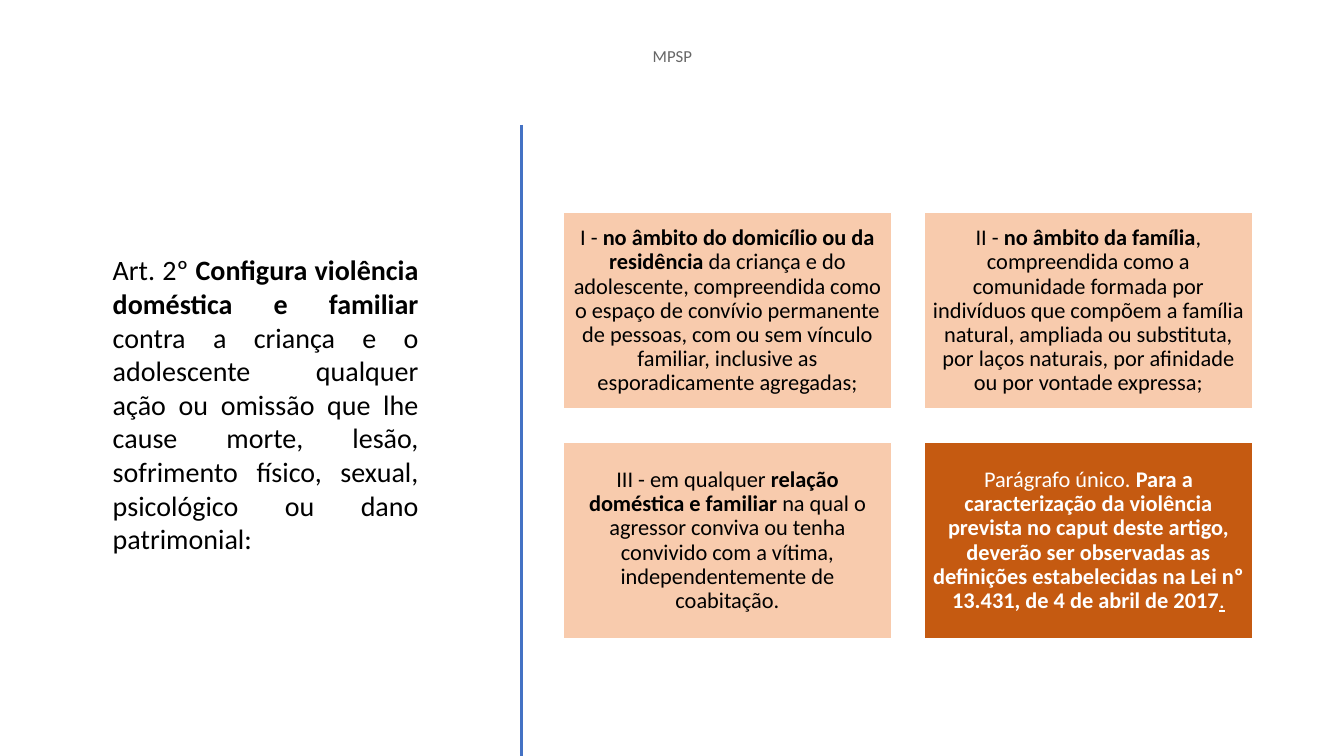
from dataclasses import dataclass

from lxml.etree import SubElement
from pptx import Presentation
from pptx.dml.color import RGBColor as RGB
from pptx.enum.shapes import MSO_CONNECTOR as Connector, MSO_SHAPE as Shape
from pptx.enum.text import MSO_ANCHOR as Anchor, PP_ALIGN as Align
from pptx.oxml.ns import qn
from pptx.slide import Slide
from pptx.text.text import TextFrame
from pptx.util import Inches, Pt


@dataclass(frozen=True)
class Theme:
    font: str = "Calibri"
    ink: RGB = RGB(0x00, 0x00, 0x00)
    muted: RGB = RGB(0x66, 0x66, 0x66)
    white: RGB = RGB(0xFF, 0xFF, 0xFF)
    peach: RGB = RGB(0xF8, 0xCB, 0xAD)
    rust: RGB = RGB(0xC5, 0x5A, 0x11)
    blue: RGB = RGB(0x44, 0x72, 0xC4)
    header: int = 12
    article: int = 20
    card: int = 16


@dataclass(frozen=True)
class Span:
    text: str
    bold: bool = False
    underline: bool = False


@dataclass(frozen=True)
class Grid:
    left: float
    top: float
    cell_w: float
    cell_h: float
    gap: float
    columns: int

    def cell(self, index: int) -> tuple[float, float, float, float]:
        row, col = divmod(index, self.columns)
        return (self.left + col * (self.cell_w + self.gap),
                self.top + row * (self.cell_h + self.gap),
                self.cell_w, self.cell_h)


@dataclass(frozen=True)
class Card:
    spans: tuple[Span, ...]
    fill: RGB
    ink: RGB


THEME = Theme()
WIDTH, HEIGHT = 13.33, 7.5
GRID = Grid(left=5.59, top=2.11, cell_w=3.25, cell_h=1.95, gap=0.33, columns=2)

ARTICLE = (
    Span("Art. 2º "),
    Span("Configura violência doméstica e familiar ", bold=True),
    Span("contra a criança e o adolescente qualquer ação ou omissão que lhe cause "
         "morte, lesão, sofrimento físico, sexual, psicológico ou dano patrimonial:"),
)
CARDS = (
    Card((
        Span("I - "),
        Span("no âmbito do domicílio ou da residência ", bold=True),
        Span("da criança e do adolescente, compreendida como o espaço de convívio "
             "permanente de pessoas, com ou sem vínculo familiar, inclusive as "
             "esporadicamente agregadas;"),
    ), THEME.peach, THEME.ink),
    Card((
        Span("II - "),
        Span("no âmbito da família", bold=True),
        Span(", compreendida como a comunidade formada por indivíduos que compõem a "
             "família natural, ampliada ou substituta, por laços naturais, por "
             "afinidade ou por vontade expressa;"),
    ), THEME.peach, THEME.ink),
    Card((
        Span("III - em qualquer "),
        Span("relação doméstica e familiar ", bold=True),
        Span("na qual o agressor conviva ou tenha convivido com a vítima, "
             "independentemente de coabitação."),
    ), THEME.peach, THEME.ink),
    Card((
        Span("Parágrafo único. "),
        Span("Para a caracterização da violência prevista no caput deste artigo, "
             "deverão ser observadas as definições estabelecidas na Lei nº 13.431, "
             "de 4 de abril de 2017", bold=True),
        Span(".", underline=True),
    ), THEME.rust, THEME.white),
)


def write(tf: TextFrame, spans: tuple[Span, ...], size: int, color: RGB,
          align: Align, anchor: Anchor, spacing: float = 1.0) -> None:
    tf.word_wrap = True
    tf.vertical_anchor = anchor
    p = tf.paragraphs[0]
    p.alignment = align
    p.line_spacing = spacing
    p.space_after = Pt(6)
    p.font.name, p.font.size, p.font.color.rgb = THEME.font, Pt(size), color
    for span in spans:
        r = p.add_run()
        r.text = span.text
        if span.bold:
            r.font.bold = True
        if span.underline:
            r.font.underline = True


def add_text(s: Slide, left: float, top: float, width: float, height: float,
             spans: tuple[Span, ...], size: int, color: RGB,
             align: Align, anchor: Anchor) -> None:
    box = s.shapes.add_textbox(*map(Inches, (left, top, width, height)))
    write(box.text_frame, spans, size, color, align, anchor)


def add_divider(s: Slide, x: float, top: float) -> None:
    line = s.shapes.add_connector(
        Connector.STRAIGHT, Inches(x), Inches(top), Inches(x), Inches(HEIGHT))
    line.line.color.rgb = THEME.blue
    line.line.width = Pt(2)
    SubElement(line.element.spPr, qn("a:effectLst"))


def add_card(s: Slide, card: Card, index: int) -> None:
    sp = s.shapes.add_shape(Shape.RECTANGLE, *map(Inches, GRID.cell(index)))
    sp.shadow.inherit = False
    sp.fill.solid()
    sp.fill.fore_color.rgb = card.fill
    sp.line.color.rgb = THEME.white
    sp.line.width = Pt(1)
    tf = sp.text_frame
    tf.margin_left = tf.margin_right = tf.margin_top = tf.margin_bottom = Inches(0.07)
    write(tf, card.spans, THEME.card, card.ink, Align.CENTER, Anchor.MIDDLE, 0.9)


def main() -> None:
    prs = Presentation()
    prs.slide_width, prs.slide_height = Inches(WIDTH), Inches(HEIGHT)
    s = prs.slides.add_slide(prs.slide_layouts[6])
    add_text(s, 4.42, 0.35, 4.5, 0.4, (Span("MPSP"),), THEME.header,
             THEME.muted, Align.CENTER, Anchor.MIDDLE)
    add_divider(s, 5.17, 1.24)
    add_text(s, 1.02, 2.46, 3.23, 3.13, ARTICLE, THEME.article,
             THEME.ink, Align.JUSTIFY, Anchor.TOP)
    for index, card in enumerate(CARDS):
        add_card(s, card, index)
    prs.save("out.pptx")


if __name__ == "__main__":
    main()
